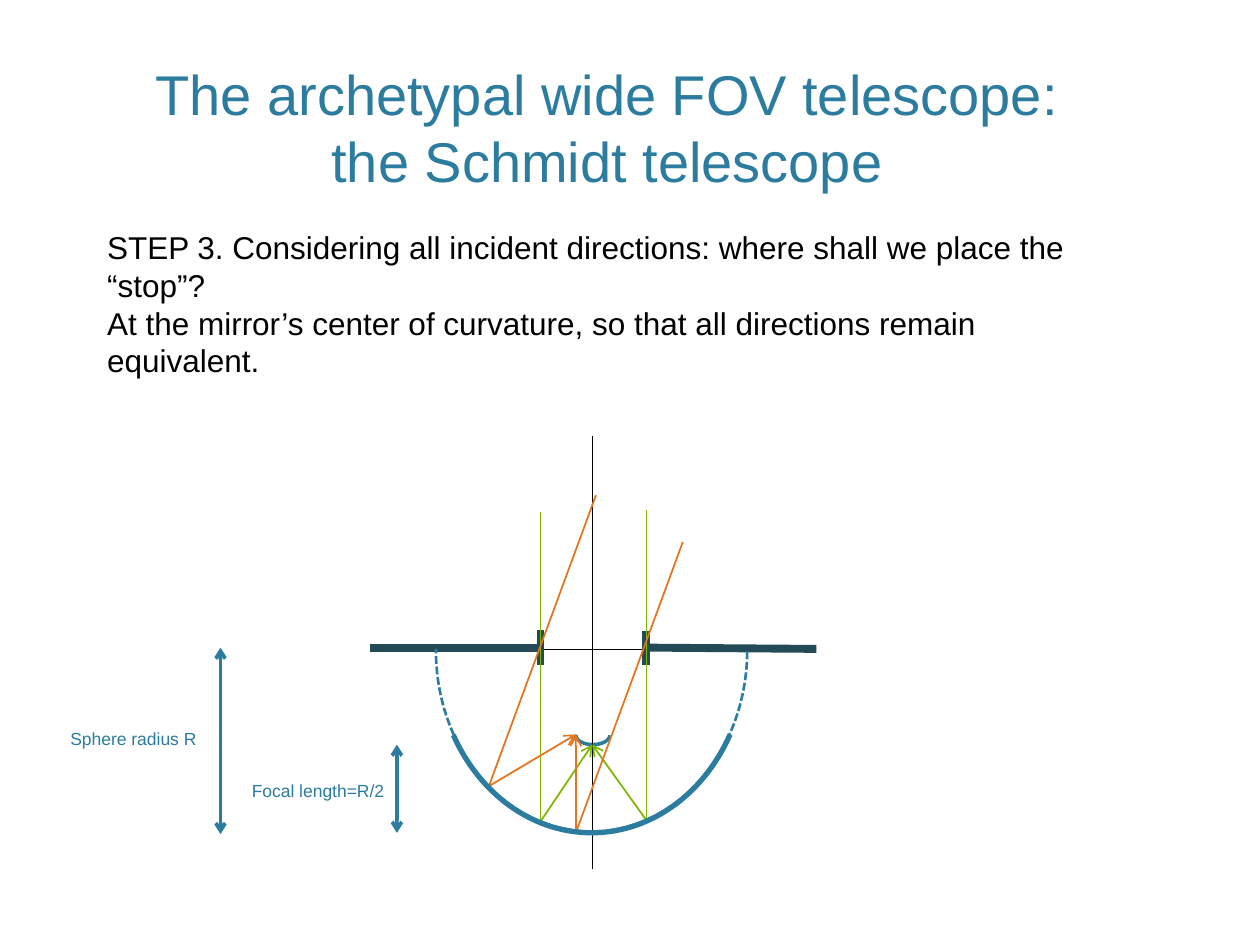
from dataclasses import dataclass
from typing import NamedTuple

from lxml import etree
from pptx import Presentation
from pptx import util as u
from pptx.dml.color import RGBColor
from pptx.enum import dml, shapes, text
from pptx.oxml import ns

COLUMNS, ROWS = 100, 75


@dataclass(frozen=True)
class Theme:
    font: str = "Arial"
    accent: str = "2C7C9F"
    ink: str = "000000"
    plate: str = "244A58"
    axial: str = "7EB606"
    oblique: str = "E2751D"
    title_size: int = 32
    body_size: int = 18
    label_size: int = 10


class Point(NamedTuple):
    column: float
    row: float


class Area(NamedTuple):
    column: float
    row: float
    columns: float
    rows: float


class Stroke(NamedTuple):
    color: str
    width: float
    head: bool = False
    tail: bool = False


class Segment(NamedTuple):
    start: Point
    end: Point
    stroke: Stroke


class Arc(NamedTuple):
    area: Area
    start: float
    end: float
    width: float
    dashed: bool = False


class Label(NamedTuple):
    wording: str
    area: Area


THEME = Theme()
deck = Presentation()
deck.slide_width, deck.slide_height = u.Inches(10), u.Inches(7.5)


def across(columns: float) -> int:
    return round(deck.slide_width * columns / COLUMNS)


def down(rows: float) -> int:
    return round(deck.slide_height * rows / ROWS)


def place(box, area: Area) -> None:
    box.left, box.top = across(area.column), down(area.row)
    box.width, box.height = across(area.columns), down(area.rows)


def write(box, wording: str, size: int, color: str, align=text.PP_ALIGN.LEFT) -> None:
    frame = box.text_frame
    frame.text = wording
    frame.word_wrap = True
    frame.auto_size = text.MSO_AUTO_SIZE.NONE
    for para in frame.paragraphs:
        para.alignment = align
        para.space_before = u.Pt(0)
        for span in para.runs:
            span.font.name = THEME.font
            span.font.size = u.Pt(size)
            span.font.color.rgb = RGBColor.from_string(color)


def remove_bullets(box) -> None:
    for para in box.text_frame.paragraphs:
        properties = para._p.get_or_add_pPr()
        properties.set("marL", "0")
        properties.set("indent", "0")
        etree.SubElement(properties, ns.qn("a:buNone"))


def draw_segment(page, segment: Segment) -> None:
    start, end, stroke = segment
    connector = page.shapes.add_connector(
        shapes.MSO_CONNECTOR.STRAIGHT,
        across(start.column), down(start.row), across(end.column), down(end.row),
    )
    connector.line.color.rgb = RGBColor.from_string(stroke.color)
    connector.line.width = u.Pt(stroke.width)
    outline = connector.line._get_or_add_ln()
    for tag, wanted in (("a:headEnd", stroke.head), ("a:tailEnd", stroke.tail)):
        if wanted:
            etree.SubElement(outline, ns.qn(tag), type="arrow")
    etree.SubElement(connector._element.spPr, ns.qn("a:effectLst"))


def draw_arc(page, arc: Arc) -> None:
    curve = page.shapes.add_shape(shapes.MSO_SHAPE.ARC, 0, 0, 0, 0)
    place(curve, arc.area)
    curve.rotation = 90
    curve.adjustments[0], curve.adjustments[1] = arc.start, arc.end
    curve.shadow.inherit = False
    curve.fill.background()
    curve.line.color.rgb = RGBColor.from_string(THEME.accent)
    curve.line.width = u.Pt(arc.width)
    if arc.dashed:
        curve.line.dash_style = dml.MSO_LINE.SQUARE_DOT


def draw_label(page, label: Label) -> None:
    box = page.shapes.add_textbox(0, 0, 0, 0)
    place(box, label.area)
    write(box, label.wording, THEME.label_size, THEME.accent)


AXIS = Stroke(THEME.ink, 0.25)
MEASURE = Stroke(THEME.accent, 2, head=True, tail=True)
PLATE = Stroke(THEME.plate, 4.5)
AXIAL = Stroke(THEME.axial, 1)
AXIAL_ARROW = AXIAL._replace(tail=True)
OBLIQUE = Stroke(THEME.oblique, 1)
OBLIQUE_ARROW = OBLIQUE._replace(tail=True)

STOP_ROW = 51.4
STOP_LEFT, STOP_RIGHT = 42.9, 51.3
FOCUS = Point(47, 59.1)
SIDE_FOCUS = Point(45.7, 58.3)
LEFT_HIT, RIGHT_HIT = Point(STOP_LEFT, 65.2), Point(STOP_RIGHT, 65.1)
OUTER_HIT, INNER_HIT = Point(38.8, 62.4), Point(45.7, 66.1)

SEGMENTS = [
    Segment(Point(31.4, 51.5), Point(62, 51.5), AXIS),
    Segment(Point(47, 69), Point(47, 34.6), AXIS),
    Segment(Point(31.5, 59.1), Point(31.5, 66.1), MEASURE),
    Segment(Point(17.5, STOP_ROW), Point(17.5, 66.2), MEASURE),
    Segment(Point(29.4, STOP_ROW), Point(STOP_LEFT, STOP_ROW), PLATE),
    Segment(Point(STOP_RIGHT, STOP_ROW), Point(64.8, 51.5), PLATE),
    Segment(Point(STOP_LEFT, 50), Point(STOP_LEFT, 52.8), PLATE),
    Segment(Point(STOP_RIGHT, 50.1), Point(STOP_RIGHT, 52.8), PLATE),
    Segment(Point(STOP_RIGHT, 40.5), RIGHT_HIT, AXIAL),
    Segment(RIGHT_HIT, FOCUS, AXIAL_ARROW),
    Segment(Point(STOP_LEFT, 40.6), LEFT_HIT, AXIAL),
    Segment(LEFT_HIT, FOCUS, AXIAL_ARROW),
    Segment(Point(54.2, 43), INNER_HIT, OBLIQUE),
    Segment(Point(47.3, 39.3), OUTER_HIT, OBLIQUE),
    Segment(OUTER_HIT, SIDE_FOCUS, OBLIQUE_ARROW),
    Segment(INNER_HIT, SIDE_FOCUS, OBLIQUE_ARROW),
]
FOCAL_SURFACE = Arc(Area(46.3, 57, 1.5, 2.7), 162.32, 55.03, 2)
MIRRORS = [
    Arc(Area(32.6, 39.4, 28.7, 24.7), 180.47, 35.4, 3),
    Arc(Area(32.6, 39.3, 28.7, 24.7), 162.15, 54.39, 1.5, dashed=True),
]
LABELS = [
    Label("Focal length=R/2", Area(19, 61.4, 23.4, 2.7)),
    Label("Sphere radius R", Area(4.6, 57.3, 14.5, 2.7)),
]
TITLE = "The archetypal wide FOV telescope: the Schmidt telescope"
BODY = (
    "STEP 3. Considering all incident directions: where shall we place the “stop”?\n"
    "At the mirror’s center of curvature, so that all directions remain equivalent."
)


def main() -> None:
    page = deck.slides.add_slide(deck.slide_layouts[1])
    title, body = page.placeholders
    place(title, Area(8.9, 4.9, 78.6, 11))
    write(title, TITLE, THEME.title_size, THEME.accent, text.PP_ALIGN.CENTER)
    title.text_frame.vertical_anchor = text.MSO_ANCHOR.BOTTOM
    place(body, Area(7.5, 17.6, 80, 13.1))
    write(body, BODY, THEME.body_size, THEME.ink)
    remove_bullets(body)
    draw_arc(page, FOCAL_SURFACE)
    for segment in SEGMENTS:
        draw_segment(page, segment)
    for mirror in MIRRORS:
        draw_arc(page, mirror)
    for label in LABELS:
        draw_label(page, label)
    deck.save("out.pptx")


if __name__ == "__main__":
    main()
